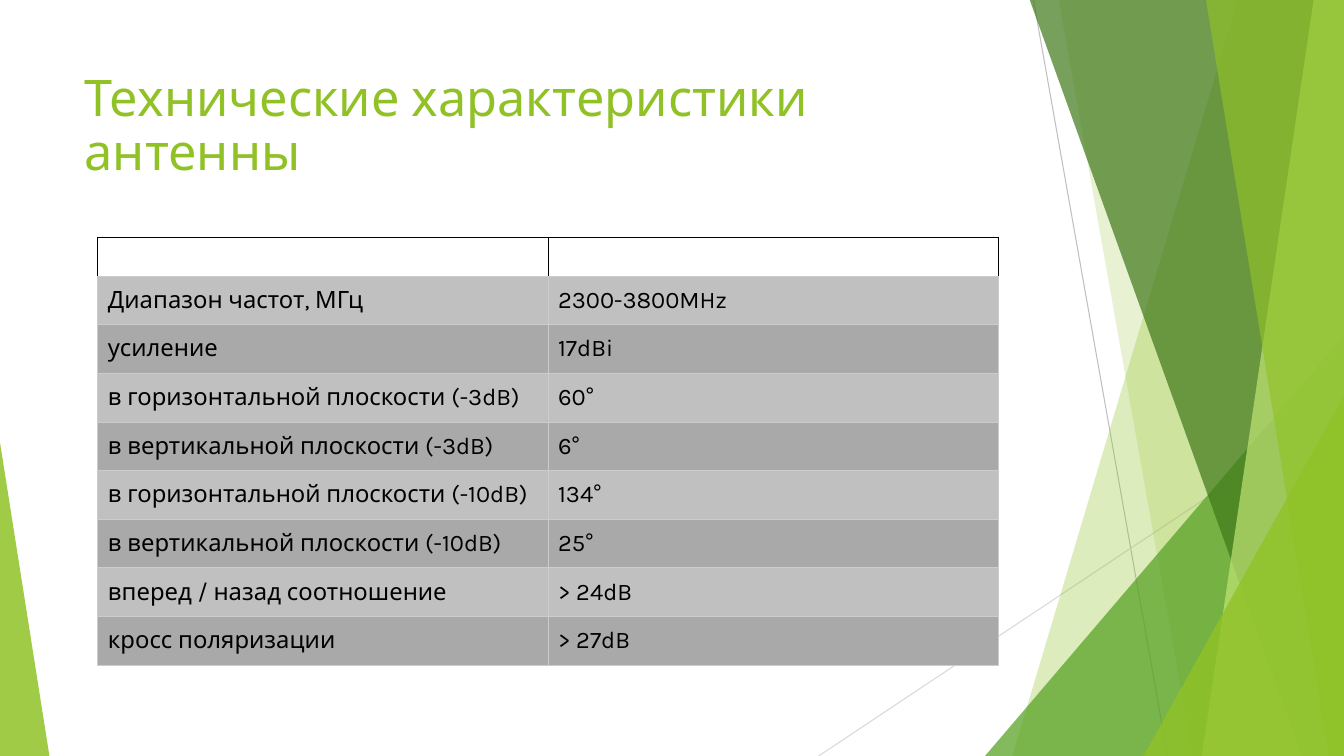
import pptx
import pptx.dml.color
import pptx.enum.shapes
import pptx.enum.text
import pptx.oxml
import pptx.oxml.ns
import pptx.util
from pptx.util import Inches

WIDTH, HEIGHT = 13.33, 7.5


def color(value):
    return pptx.dml.color.RGBColor.from_string(value)


class SlideBuilder:
    font = "Karla"
    green = "90C226"
    text_color = "000000"
    grid_color = "CCCCCC"
    bands = ("C0C0C0", "A9A9A9")

    def __init__(self, page):
        self.page = page

    def add_text(self, frame, text, size, ink):
        para = frame.paragraphs[0]
        span = para.add_run()
        span.text = text
        span.font.name = self.font
        span.font.size = pptx.util.Pt(size)
        span.font.color.rgb = color(ink)
        return para

    def title(self, text, left, top, width, height):
        box = self.page.shapes.title
        box.left, box.top = Inches(left), Inches(top)
        box.width, box.height = Inches(width), Inches(height)
        frame = box.text_frame
        frame.word_wrap = True
        frame.auto_size = pptx.enum.text.MSO_AUTO_SIZE.NONE
        frame.vertical_anchor = pptx.enum.text.MSO_ANCHOR.TOP
        para = self.add_text(frame, text, 36, self.green)
        para.alignment = pptx.enum.text.PP_ALIGN.LEFT
        para.line_spacing = 0.9

    def line(self, start, end, ink):
        line = self.page.shapes.add_connector(
            pptx.enum.shapes.MSO_CONNECTOR.STRAIGHT,
            *(Inches(value) for value in (*start, *end)))
        line.line.color.rgb = color(ink)
        line.line.width = pptx.util.Pt(0.75)
        properties = line._element.spPr
        properties.append(pptx.oxml.parse_xml(
            f'<a:effectLst {pptx.oxml.ns.nsdecls("a")}/>'))

    def paint(self, shape, ink, opacity):
        shape.shadow.inherit = False
        shape.line.fill.background()
        shape.fill.solid()
        shape.fill.fore_color.rgb = color(ink)
        tint = shape._element.spPr.find(".//" + pptx.oxml.ns.qn("a:srgbClr"))
        tint.append(pptx.oxml.parse_xml(
            f'<a:alpha {pptx.oxml.ns.nsdecls("a")} val="{opacity * 1000}"/>'))

    def facet(self, top_x, bottom_x, ink, opacity):
        """Full-height panel with a slanted left side, ending at the right edge."""
        corners = [(top_x, -0.01), (WIDTH, -0.01), (WIDTH, HEIGHT), (bottom_x, HEIGHT)]
        points = [(Inches(x), Inches(y)) for x, y in corners]
        outline = self.page.shapes.build_freeform(*points[0])
        outline.add_line_segments(points[1:], close=True)
        self.paint(outline.convert_to_shape(), ink, opacity)

    def triangle(self, left, top, width, apex, ink, opacity):
        """Right-angled triangle standing on the bottom edge."""
        shape = self.page.shapes.add_shape(
            pptx.enum.shapes.MSO_SHAPE.ISOSCELES_TRIANGLE,
            Inches(left), Inches(top), Inches(width), Inches(HEIGHT - top))
        shape.adjustments[0] = apex
        self.paint(shape, ink, opacity)

    def borders(self, cell, **sides):
        for side, ink in sides.items():
            cell._tc.get_or_add_tcPr().append(pptx.oxml.parse_xml(
                f'<a:ln{side} {pptx.oxml.ns.nsdecls("a")} w="9525"><a:solidFill>'
                f'<a:srgbClr val="{ink}"/></a:solidFill></a:ln{side}>'))

    def table(self, rows, left, top, width, height, header_height):
        table = self.page.shapes.add_table(
            len(rows) + 1, 2, Inches(left), Inches(top),
            Inches(width), Inches(height)).table
        table.first_row = table.horz_banding = False

        # Empty header row
        table.rows[0].height = Inches(header_height)
        for cell in table.rows[0].cells:
            cell.margin_top = cell.margin_bottom = 0
            self.borders(cell, L=self.text_color, R=self.text_color,
                         T=self.text_color, B=self.grid_color)
            cell.fill.background()

        # Banded value rows
        for index, texts in enumerate(rows):
            row = table.rows[index + 1]
            row.height = Inches((height - header_height) / len(rows))
            for cell, text in zip(row.cells, texts):
                cell.margin_left = cell.margin_right = Inches(0.1)
                cell.margin_top = cell.margin_bottom = Inches(0.05)
                cell.vertical_anchor = pptx.enum.text.MSO_ANCHOR.MIDDLE
                self.borders(cell, **dict.fromkeys("LRTB", self.grid_color))
                cell.fill.solid()
                cell.fill.fore_color.rgb = color(self.bands[index % 2])
                self.add_text(cell.text_frame, text, 17, self.text_color)


def main():
    deck = pptx.Presentation()
    deck.slide_width, deck.slide_height = Inches(WIDTH), Inches(HEIGHT)
    slide = SlideBuilder(deck.slides.add_slide(deck.slide_layouts[5]))

    # Decoration
    slide.line((10.25, 0), (11.58, HEIGHT), "BFBFBF")
    slide.line((WIDTH, 4.03), (8.12, HEIGHT), "D9D9D9")
    slide.facet(12.28, 10.04, slide.green, 30)
    slide.facet(10.5, 11.83, slide.green, 20)
    slide.triangle(9.77, 3.33, 3.56, 1, "54A021", 72)
    slide.facet(10.21, 12.91, "3F7819", 70)
    slide.facet(13.03, 11.92, "C0E474", 70)
    slide.facet(11.96, 13.18, slide.green, 65)
    slide.triangle(11.34, 3.93, 1.99, 1, slide.green, 80)
    slide.triangle(0, 4.39, 0.49, 0, slide.green, 85)

    # Title
    slide.title("Технические характеристики антенны", 0.74, 0.67, 9.4, 1.44)

    # Antenna data
    slide.table([
        ("Диапазон частот, МГц", "2300-3800MHz"),
        ("усиление", "17dBi"),
        ("в горизонтальной плоскости (-3dB)", "60°"),
        ("в вертикальной плоскости (-3dB)", "6°"),
        ("в горизонтальной плоскости (-10dB)", "134°"),
        ("в вертикальной плоскости (-10dB)", "25°"),
        ("вперед / назад соотношение", "> 24dB"),
        ("кросс поляризации", "> 27dB"),
    ], 0.97, 2.36, 8.93, 4.24, 0.38)

    deck.save("out.pptx")


if __name__ == "__main__":
    main()
